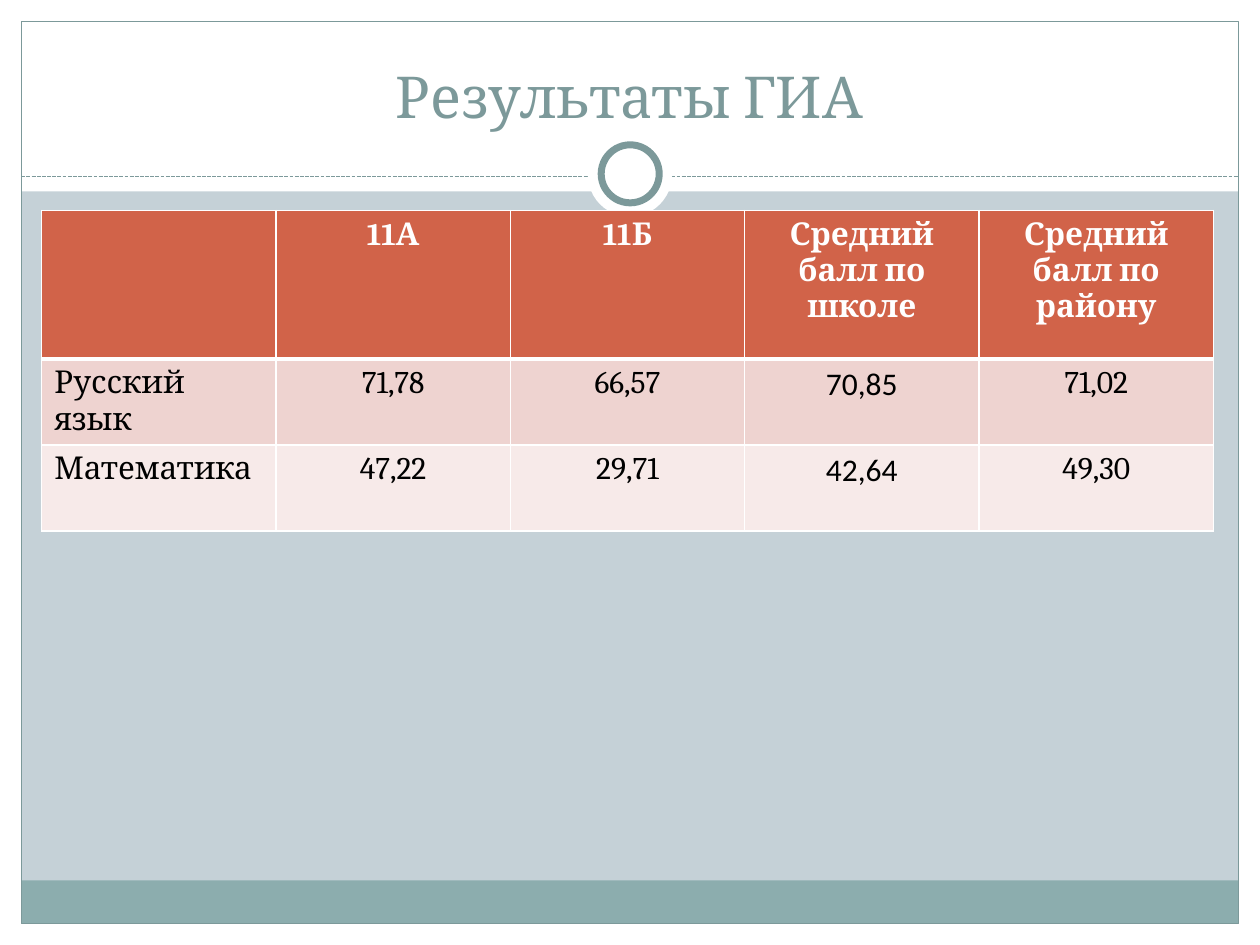
"""Build the slide with the GIA exam results table."""
from dataclasses import dataclass

from lxml.etree import SubElement
from pptx import Presentation
from pptx.dml.color import RGBColor
from pptx.enum.dml import MSO_LINE
from pptx.enum.shapes import MSO_CONNECTOR, MSO_SHAPE
from pptx.enum.text import MSO_ANCHOR, MSO_AUTO_SIZE, PP_ALIGN
from pptx.oxml.ns import qn
from pptx.slide import Slide
from pptx.table import _Cell as Cell
from pptx.text.text import _Paragraph as Paragraph
from pptx.util import Cm, Pt

WHITE = RGBColor(0xFF, 0xFF, 0xFF)
BLACK = RGBColor(0, 0, 0)
BACKDROP = RGBColor(0xC5, 0xD1, 0xD7)
SAGE = RGBColor(0x7C, 0x99, 0x9A)
FOOTER_TEAL = RGBColor(0x8C, 0xAD, 0xAE)
HEADER_RED = RGBColor(0xD1, 0x63, 0x49)
ROW_FILLS = (HEADER_RED, RGBColor(0xEE, 0xD3, 0xD0), RGBColor(0xF7, 0xEA, 0xE9))

SLIDE_W, SLIDE_H, MARGIN = 25.4, 19.05, 0.43
INNER_W = SLIDE_W - 2 * MARGIN
DIVIDER_Y = 3.56
SERIF, SANS = "Cambria", "Calibri"
SCHOOL_COLUMN = 3
ROW_HEIGHTS = (3.0, 1.73, 1.73)
RESULTS = (
    ("", "11А", "11Б", "Средний балл по школе", "Средний балл по району"),
    ("Русский язык", "71,78", "66,57", "70,85", "71,02"),
    ("Математика", "47,22", "29,71", "42,64", "49,30"),
)


@dataclass(frozen=True)
class Decoration:
    left: float
    top: float
    width: float
    height: float
    fill: RGBColor | None = WHITE
    line_width: float = 0
    outline: MSO_SHAPE = MSO_SHAPE.RECTANGLE


BANDS = (
    Decoration(0, SLIDE_H - MARGIN, SLIDE_W, MARGIN),
    Decoration(0, 0, SLIDE_W, 3.86),
    Decoration(0, 0, MARGIN, SLIDE_H),
    Decoration(SLIDE_W - MARGIN, 0, MARGIN, SLIDE_H),
    Decoration(MARGIN, 17.75, INNER_W, 0.87, FOOTER_TEAL),
    Decoration(MARGIN, MARGIN, INNER_W, SLIDE_H - 2 * MARGIN, None, 0.75),
)
MEDALLION = (
    Decoration(11.85, 2.67, 1.7, 1.7, outline=MSO_SHAPE.OVAL),
    Decoration(12.12, 2.92, 1.17, 1.17, line_width=4, outline=MSO_SHAPE.OVAL),
)


def draw_decoration(slide: Slide, part: Decoration) -> None:
    shape = slide.shapes.add_shape(
        part.outline, Cm(part.left), Cm(part.top), Cm(part.width), Cm(part.height)
    )
    shape.shadow.inherit = False
    if part.fill is None:
        shape.fill.background()
    else:
        shape.fill.solid()
        shape.fill.fore_color.rgb = part.fill
    if part.line_width:
        shape.line.color.rgb = SAGE
        shape.line.width = Pt(part.line_width)
    else:
        shape.line.fill.background()


def draw_divider(slide: Slide) -> None:
    divider = slide.shapes.add_connector(
        MSO_CONNECTOR.STRAIGHT,
        Cm(MARGIN), Cm(DIVIDER_Y), Cm(SLIDE_W - MARGIN), Cm(DIVIDER_Y),
    )
    divider.line.color.rgb = SAGE
    divider.line.width = Pt(0.75)
    divider.line.dash_style = MSO_LINE.SQUARE_DOT
    SubElement(divider.element.spPr, qn("a:effectLst"))


def add_run(
    paragraph: Paragraph, text: str, size: float, color: RGBColor,
    font: str = SERIF, bold: bool = False,
) -> None:
    run = paragraph.add_run()
    run.text = text
    run.font.size = Pt(size)
    run.font.name = font
    run.font.bold = bold
    run.font.color.rgb = color


def place_title(slide: Slide) -> None:
    title = slide.shapes.title
    title.left, title.top, title.width, title.height = Cm(0.84), Cm(0.64), Cm(23.7), Cm(2.11)
    frame = title.text_frame
    frame.auto_size = MSO_AUTO_SIZE.NONE
    frame.vertical_anchor = MSO_ANCHOR.BOTTOM
    heading = frame.paragraphs[0]
    heading.alignment = PP_ALIGN.CENTER
    add_run(heading, "Результаты ГИА", 33, SAGE)
    title.element.getparent().append(title.element)


def set_borders(cell: Cell, bottom_width: float) -> None:
    properties = cell._tc.get_or_add_tcPr()
    for side, width in (("L", 1), ("R", 1), ("T", 1), ("B", bottom_width)):
        border = SubElement(properties, qn(f"a:ln{side}"), w=str(Pt(width)))
        fill = SubElement(border, qn("a:solidFill"))
        SubElement(fill, qn("a:srgbClr"), val=str(WHITE))


def draw_results(slide: Slide) -> None:
    table = slide.shapes.add_table(
        len(RESULTS), len(RESULTS[0]), Cm(0.84), Cm(4.24), Cm(23.62), Cm(sum(ROW_HEIGHTS))
    ).table
    for row_index, (texts, height, fill) in enumerate(zip(RESULTS, ROW_HEIGHTS, ROW_FILLS)):
        table.rows[row_index].height = Cm(height)
        is_header = row_index == 0
        for column_index, text in enumerate(texts):
            cell = table.cell(row_index, column_index)
            set_borders(cell, 3 if is_header else 1)
            cell.fill.solid()
            cell.fill.fore_color.rgb = fill
            if not text:
                continue
            score = cell.text_frame.paragraphs[0]
            score.alignment = PP_ALIGN.CENTER if column_index else PP_ALIGN.LEFT
            font = SANS if column_index == SCHOOL_COLUMN and not is_header else SERIF
            add_run(score, text, 18, WHITE if is_header else BLACK, font, is_header)


def main() -> None:
    presentation = Presentation()
    presentation.slide_width, presentation.slide_height = Cm(SLIDE_W), Cm(SLIDE_H)
    slide = presentation.slides.add_slide(presentation.slide_layouts[5])
    slide.background.fill.solid()
    slide.background.fill.fore_color.rgb = BACKDROP
    for band in BANDS:
        draw_decoration(slide, band)
    draw_divider(slide)
    for circle in MEDALLION:
        draw_decoration(slide, circle)
    place_title(slide)
    draw_results(slide)
    presentation.save("out.pptx")


if __name__ == "__main__":
    main()
